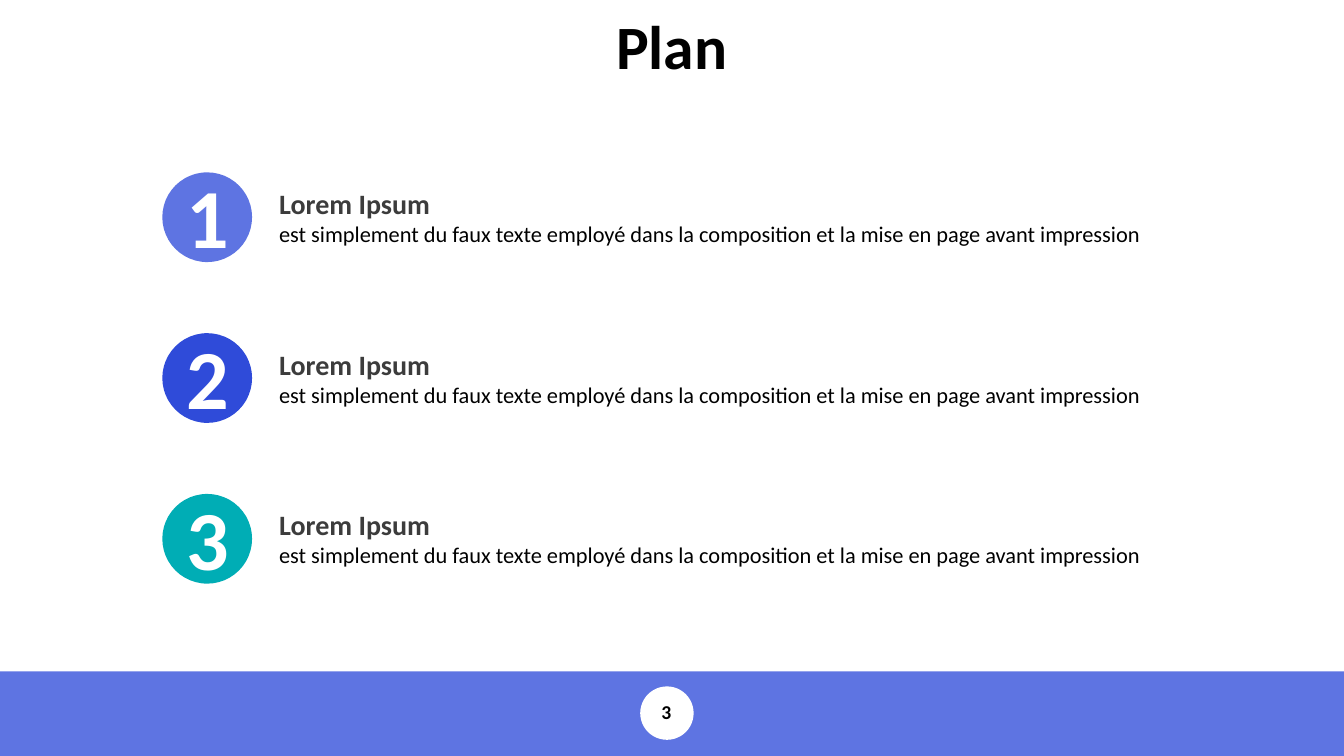
import pptx
import pptx.util
import pptx.dml.color
import pptx.enum.shapes
import pptx.enum.text

Inches = pptx.util.Inches
ALIGN = pptx.enum.text.PP_ALIGN
ANCHOR = pptx.enum.text.MSO_ANCHOR
SHAPE = pptx.enum.shapes.MSO_SHAPE

HEADING = "Plan"
PAGE_NUMBER = "3"
DETAIL = "est simplement du faux texte employé dans la composition et la mise en page avant impression"
STEPS = [
    ("1", "Lorem Ipsum", DETAIL, "5E74E2"),
    ("2", "Lorem Ipsum", DETAIL, "2F4BD9"),
    ("3", "Lorem Ipsum", DETAIL, "00ADB5"),
]


class Theme:
    font = "Calibri"
    band = "5E74E2"
    white = "FFFFFF"
    black = "000000"
    label = "3C3C3C"
    heading_size = 44
    number_size = 60
    label_size = 20
    detail_size = 16
    page_size = 14


WIDTH, HEIGHT = 13.33, 7.5
FIRST_TOP, STEP_PITCH = 1.71, 1.595
BADGE_LEFT, BADGE_SIZE = 1.61, 0.89


def rgb(value):
    return pptx.dml.color.RGBColor.from_string(value)


def add_filled(slide, preset, left, top, width, height, color):
    filled = slide.shapes.add_shape(preset, Inches(left), Inches(top), Inches(width), Inches(height))
    filled.shadow.inherit = False
    filled.fill.solid()
    filled.fill.fore_color.rgb = rgb(color)
    filled.line.fill.background()


def write(frame, lines, wrap=False, anchor=ANCHOR.TOP):
    frame.word_wrap = wrap
    frame.auto_size = pptx.enum.text.MSO_AUTO_SIZE.NONE
    frame.vertical_anchor = anchor
    frame.text = "\n".join(line[0] for line in lines)
    for paragraph, (_, size, color, bold, align) in zip(frame.paragraphs, lines):
        paragraph.alignment = align
        for run in paragraph.runs:
            run.font.name = Theme.font
            run.font.size = pptx.util.Pt(size)
            run.font.bold = bold
            run.font.color.rgb = rgb(color)


def add_text(slide, left, top, width, height, lines, **options):
    box = slide.shapes.add_textbox(Inches(left), Inches(top), Inches(width), Inches(height))
    write(box.text_frame, lines, **options)
    return box.text_frame


def add_step(slide, top, number, label, detail, color):
    add_filled(slide, SHAPE.OVAL, BADGE_LEFT, top, BADGE_SIZE, BADGE_SIZE, color)
    add_text(slide, 2.67, top + 0.09, 8.85, 0.71, [
        (label, Theme.label_size, Theme.label, True, ALIGN.LEFT),
        (detail, Theme.detail_size, Theme.black, False, ALIGN.JUSTIFY),
    ])
    add_text(slide, 1.75, top - 0.13, 0.63, 1.11,
             [(number, Theme.number_size, Theme.white, True, ALIGN.LEFT)], anchor=ANCHOR.MIDDLE)


def main():
    deck = pptx.Presentation()
    deck.slide_width, deck.slide_height = Inches(WIDTH), Inches(HEIGHT)
    slide = deck.slides.add_slide(deck.slide_layouts[5])

    heading = slide.shapes.title
    heading.left, heading.top = Inches(6.01), Inches(0.03)
    heading.width, heading.height = Inches(1.32), Inches(0.84)
    write(heading.text_frame, [(HEADING, Theme.heading_size, Theme.black, True, ALIGN.LEFT)])

    for index, step in enumerate(STEPS):
        add_step(slide, FIRST_TOP + index * STEP_PITCH, *step)

    add_filled(slide, SHAPE.RECTANGLE, 0, 6.66, WIDTH, 0.84, Theme.band)
    add_filled(slide, SHAPE.OVAL, 6.35, 6.81, 0.53, 0.53, Theme.white)
    page = add_text(slide, 6.18, 6.92, 0.86, 0.31,
                    [(PAGE_NUMBER, Theme.page_size, Theme.black, True, ALIGN.CENTER)], wrap=True)
    page.paragraphs[0].line_spacing = 0.9

    deck.save("out.pptx")


if __name__ == "__main__":
    main()
